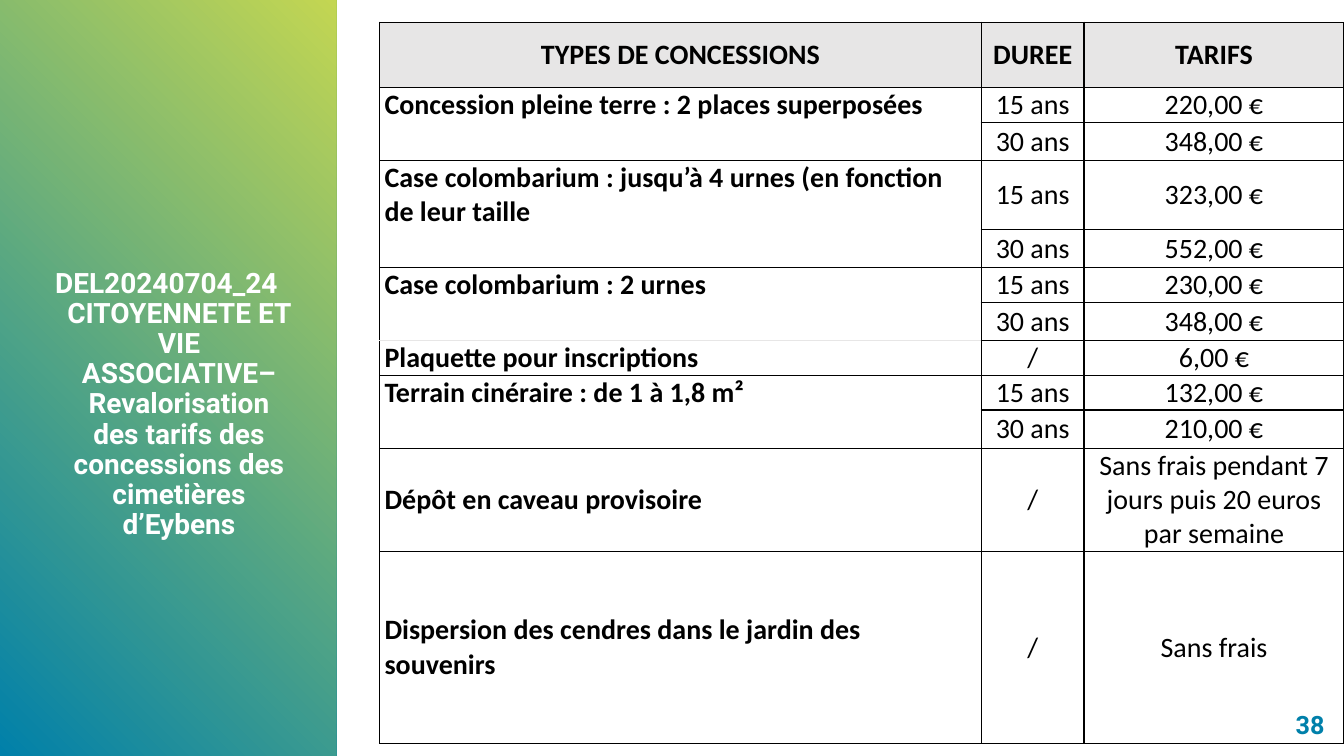
from dataclasses import dataclass

from lxml.etree import SubElement
from pptx import Presentation
from pptx.dml.color import RGBColor
from pptx.enum.shapes import MSO_SHAPE as Shape
from pptx.enum.text import MSO_ANCHOR as Anchor, PP_ALIGN as Align
from pptx.oxml.ns import qn
from pptx.util import Cm, Pt


@dataclass(frozen=True)
class Theme:
    blue: str = "0080AA"
    lime: str = "C3D652"
    grey: str = "E7E6E6"
    black: str = "000000"
    white: str = "FFFFFF"
    title_font: str = "Roboto"
    table_font: str = "Calibri"
    text_size: int = 20
    number_size: int = 18
    border: int = 1


theme = Theme()


def style_runs(para, font, size, color, bold):
    for span in para.runs:
        span.font.name = font
        span.font.size = Pt(size)
        span.font.bold = bold
        span.font.color.rgb = RGBColor.from_string(color)


def draw_borders(cell, colors):
    """Draw the left, right, top and bottom edges; None leaves an edge open."""
    properties = cell._tc.get_or_add_tcPr()
    for index, (side, color) in enumerate(zip("LRTB", colors)):
        line = SubElement(properties, qn(f"a:ln{side}"), w=str(Pt(theme.border)))
        if color:
            fill = SubElement(line, qn("a:solidFill"))
            SubElement(fill, qn("a:srgbClr"), val=color)
        else:
            SubElement(line, qn("a:noFill"))
        properties.insert(index, line)


deck = Presentation()
deck.slide_width, deck.slide_height = Cm(33.87), Cm(19.05)
page = deck.slides.add_slide(deck.slide_layouts[6])

# Page number
number_box = page.shapes.add_textbox(Cm(24.18), Cm(17.73), Cm(9.45), Cm(1.04))
number_box.text_frame.word_wrap = True
number_box.text_frame.vertical_anchor = Anchor.MIDDLE
number = number_box.text_frame.paragraphs[0]
number.text = "38"
number.alignment = Align.RIGHT
style_runs(number, theme.title_font, theme.number_size, theme.blue, True)

# Side panel with the title
panel = page.shapes.add_shape(Shape.RECTANGLE, 0, 0, Cm(8.47), deck.slide_height)
panel.shadow.inherit = False
panel.line.fill.background()
panel.fill.gradient()
panel.fill.gradient_angle = 45
for stop, color in zip(panel.fill.gradient_stops, (theme.blue, theme.lime)):
    stop.color.rgb = RGBColor.from_string(color)

title_box = page.shapes.add_textbox(Cm(0.79), Cm(6.65), Cm(6.81), Cm(13.84))
title_box.text_frame.word_wrap = True
title = title_box.text_frame.paragraphs[0]
title.text = (
    "DEL20240704_24 CITOYENNETE ET VIE ASSOCIATIVE–Revalorisation "
    "des tarifs des concessions des cimetières d’Eybens"
)
title.alignment = Align.CENTER
title.line_spacing = 0.9
indent = Cm(0.635)
title_properties = title._p.get_or_add_pPr()
title_properties.set("marL", str(indent))
title_properties.set("indent", str(-indent))
style_runs(title, theme.title_font, theme.text_size, theme.white, True)

# Price table: an empty type continues the one above
prices = [
    ("TYPES DE CONCESSIONS", "DUREE", "TARIFS", 1.65),
    ("Concession pleine terre : 2 places superposées", "15 ans", "220,00 €", 0.87),
    ("", "30 ans", "348,00 €", 0.97),
    ("Case colombarium : jusqu’à 4 urnes (en fonction de leur taille",
     "15 ans", "323,00 €", 1.73),
    ("", "30 ans", "552,00 €", 0.97),
    ("Case colombarium : 2 urnes", "15 ans", "230,00 €", 0.87),
    ("", "30 ans", "348,00 €", 0.97),
    ("Plaquette pour inscriptions", "/", "6,00 €", 0.87),
    ("Terrain cinéraire : de 1 à 1,8 m²", "15 ans", "132,00 €", 0.87),
    ("", "30 ans", "210,00 €", 0.97),
    ("Dépôt en caveau provisoire", "/",
     "Sans frais pendant 7 jours puis 20 euros par semaine", 2.6),
    ("Dispersion des cendres dans le jardin des souvenirs", "/", "Sans frais", 4.83),
]
plaquette_row = 7
widths = (15.16, 2.59, 6.55)

table = page.shapes.add_table(
    len(prices), len(widths), Cm(9.57), Cm(0.56), Cm(sum(widths)), Cm(18.1)
).table
table.first_row = table.horz_banding = False
for column, width in zip(table.columns, widths):
    column.width = Cm(width)

for row, (*texts, height) in enumerate(prices):
    table.rows[row].height = Cm(height)
    for col, text in enumerate(texts):
        cell = table.cell(row, col)
        header, concession = row == 0, col == 0
        cell.margin_left = cell.margin_right = Cm(0.12)
        cell.margin_top = cell.margin_bottom = 0
        cell.vertical_anchor = Anchor.MIDDLE
        if header:
            cell.fill.solid()
            cell.fill.fore_color.rgb = RGBColor.from_string(theme.grey)
        else:
            cell.fill.background()

        top = bottom = theme.black
        if concession:
            following = prices[row + 1][0] if row + 1 < len(prices) else "end"
            top = theme.black if text else None
            bottom = theme.black if following else None
            if row == plaquette_row:
                top = theme.grey
            elif row + 1 == plaquette_row:
                bottom = theme.grey
        draw_borders(cell, (theme.black, theme.black, top, bottom))

        if text:
            para = cell.text_frame.paragraphs[0]
            para.text = text
            para.alignment = Align.LEFT if concession and not header else Align.CENTER
            style_runs(para, theme.table_font, theme.text_size, theme.black,
                       header or concession)

deck.save("out.pptx")
